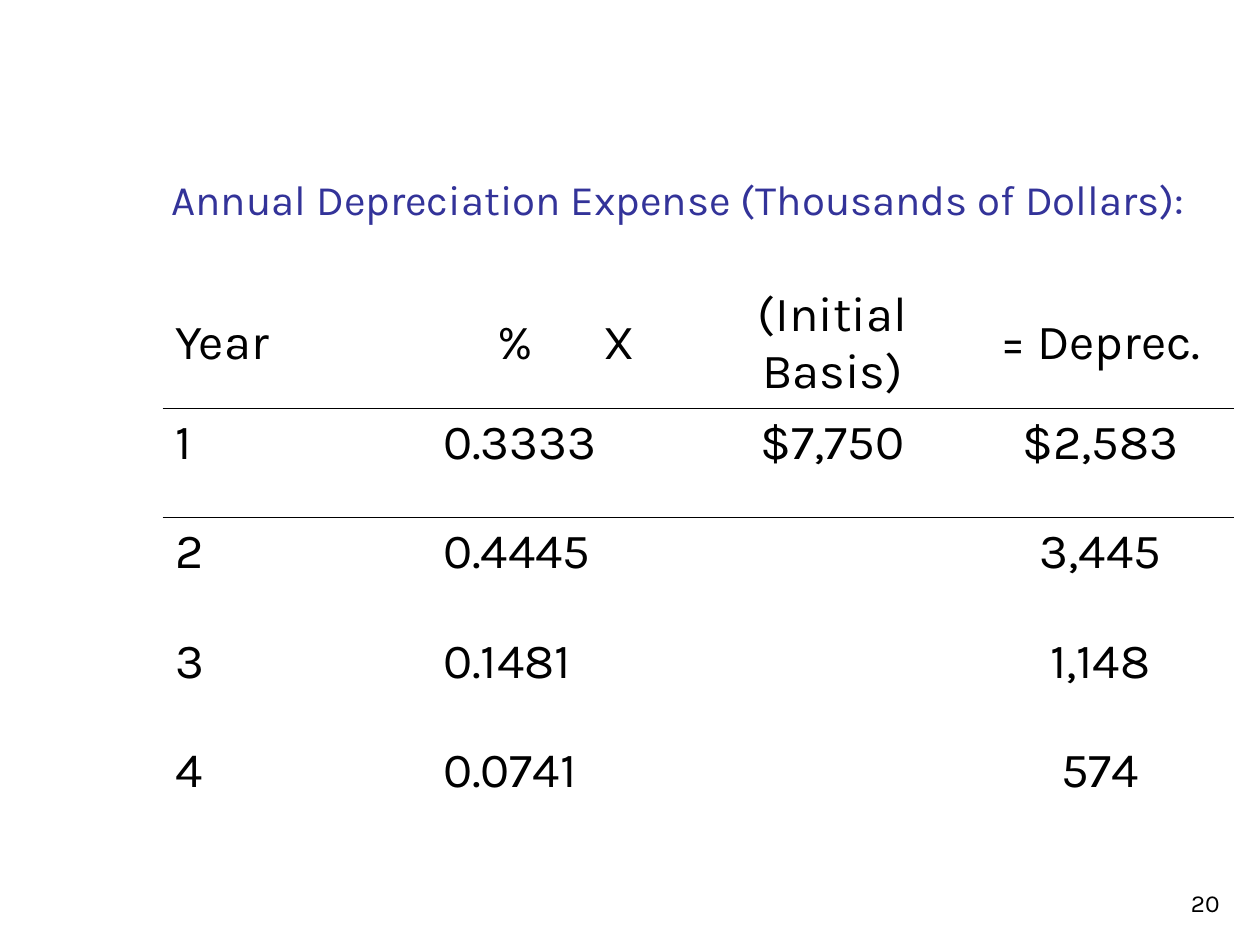
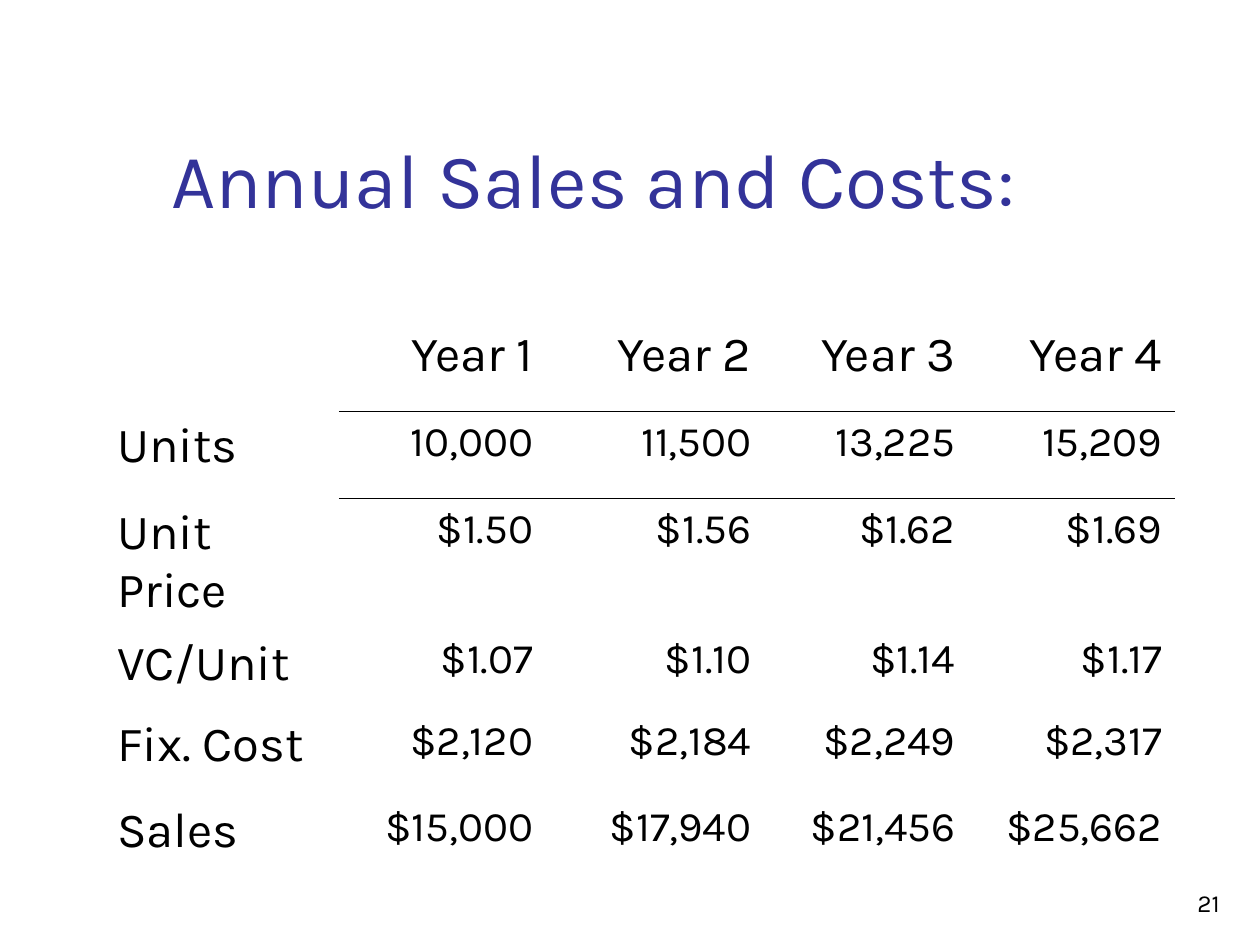
from lxml.etree import SubElement
from pptx import Presentation
from pptx.dml.color import RGBColor
from pptx.enum.text import MSO_ANCHOR, MSO_AUTO_SIZE, PP_ALIGN
from pptx.oxml.ns import qn
from pptx.util import Cm, Pt

FONT = "Karla"
TITLE_COLOR = "333399"
TEXT_COLOR = "000000"
NO_TABLE_STYLE = "{2D5ABB26-0587-4C30-8999-92F81FD0307C}"
LEFT, CENTER, RIGHT = PP_ALIGN.LEFT, PP_ALIGN.CENTER, PP_ALIGN.RIGHT

DEPRECIATION = [
    ["Year", "%\tX", "(Initial Basis)", "= Deprec."],
    ["1", "0.3333", "$7,750", "$2,583"],
    ["2", "0.4445", "", "3,445"],
    ["3", "0.1481", "", "1,148"],
    ["4", "0.0741", "", "574"],
]
SALES_AND_COSTS = [
    ["", "Year 1", "Year 2", "Year 3", "Year 4"],
    ["Units", "10,000", "11,500", "13,225", "15,209"],
    ["Unit Price", "$1.50", "$1.56", "$1.62", "$1.69"],
    ["VC/Unit", "$1.07", "$1.10", "$1.14", "$1.17"],
    ["Fix. Cost", "$2,120", "$2,184", "$2,249", "$2,317"],
    ["Sales", "$15,000", "$17,940", "$21,456", "$25,662"],
]


def color(hex_string):
    return RGBColor.from_string(hex_string)


def add_run(paragraph, text, size, hex_string=TEXT_COLOR, alignment=LEFT):
    paragraph.alignment = alignment
    run = paragraph.add_run()
    run.text = text
    run.font.name = FONT
    run.font.size = Pt(size)
    run.font.color.rgb = color(hex_string)


def add_slide(presentation, title_text, title_size, number):
    slide = presentation.slides.add_slide(presentation.slide_layouts[5])
    title = slide.shapes.title
    title.left, title.top, title.width, title.height = Cm(3.2), Cm(0.58), Cm(21.64), Cm(4.06)
    title.text_frame.auto_size = MSO_AUTO_SIZE.NONE
    title.text_frame.vertical_anchor = MSO_ANCHOR.BOTTOM
    add_run(title.text_frame.paragraphs[0], title_text, title_size, TITLE_COLOR)

    number_box = slide.shapes.add_textbox(Cm(19.56), Cm(17.35), Cm(5.28), Cm(1.27))
    number_box.text_frame.word_wrap = True
    number_box.text_frame.vertical_anchor = MSO_ANCHOR.BOTTOM
    add_run(number_box.text_frame.paragraphs[0], str(number), 14, alignment=RIGHT)
    return slide


def add_border(cell, edge):
    properties = cell._tc.get_or_add_tcPr()
    line = properties.makeelement(qn(f"a:{edge}"), {"w": str(Pt(1))})
    fill = SubElement(line, qn("a:solidFill"))
    SubElement(fill, qn("a:srgbClr"), val=TEXT_COLOR)
    properties.insert(0, line)


def add_tab_stop(paragraph, position):
    tabs = SubElement(paragraph._p.get_or_add_pPr(), qn("a:tabLst"))
    SubElement(tabs, qn("a:tab"), pos=str(position), algn="l")


def add_data_table(slide, rows, left, top, column_widths, row_heights, alignments, value_size):
    frame = slide.shapes.add_table(
        len(rows), len(column_widths), Cm(left), Cm(top),
        Cm(sum(column_widths)), Cm(sum(row_heights)))
    table = frame.table
    table._tbl.tblPr.find(qn("a:tableStyleId")).text = NO_TABLE_STYLE
    table.first_row = table.horz_banding = False
    for column, width in zip(table.columns, column_widths):
        column.width = Cm(width)
    for row, height in zip(table.rows, row_heights):
        row.height = Cm(height)
    for row_index, values in enumerate(rows):
        for column_index, text in enumerate(values):
            cell = table.cell(row_index, column_index)
            cell.fill.background()
            if row_index < 2 and rows[0][column_index]:
                add_border(cell, "lnT" if row_index else "lnB")
            if text:
                size = value_size if row_index and column_index else 28
                add_run(cell.text_frame.paragraphs[0], text, size,
                        alignment=alignments[column_index])
    return table


def add_depreciation_slide(presentation):
    slide = add_slide(
        presentation, "Annual Depreciation Expense (Thousands of Dollars):", 24, 20)
    table = add_data_table(
        slide, DEPRECIATION, 3.28, 5.61, [5.4] * 4, [2.29] + [2.2] * 4,
        [LEFT, LEFT, CENTER, CENTER], 28)
    for column_index in range(4):
        table.cell(0, column_index).vertical_anchor = MSO_ANCHOR.MIDDLE
    for column_index in (2, 3):
        table.cell(0, column_index).text_frame.word_wrap = True
    percent_cell = table.cell(0, 1)
    percent_cell.margin_left = Cm(1.35)
    add_tab_stop(percent_cell.text_frame.paragraphs[0], Cm(2.13))


def add_sales_slide(presentation):
    slide = add_slide(presentation, "Annual Sales and Costs:", 44, 21)
    add_data_table(
        slide, SALES_AND_COSTS, 2.11, 6.45, [4.72, 4.17, 4.4, 4.11, 4.17],
        [1.85, 1.75, 1.75, 1.65, 1.73, 1.73], [LEFT] + [RIGHT] * 4, 24)


def main():
    presentation = Presentation()
    presentation.slide_width, presentation.slide_height = Cm(25.4), Cm(19.05)
    add_depreciation_slide(presentation)
    add_sales_slide(presentation)
    presentation.save("out.pptx")


if __name__ == "__main__":
    main()
